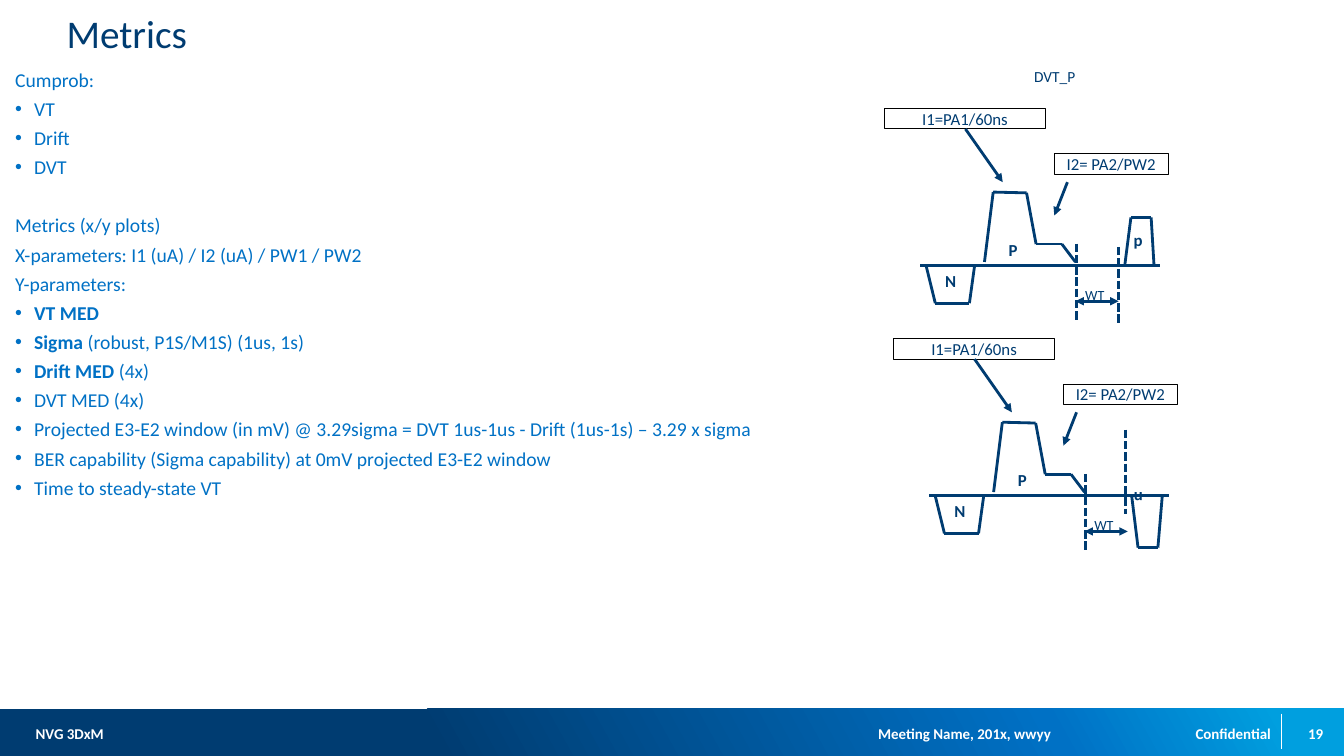
from copy import deepcopy
from dataclasses import dataclass
from itertools import pairwise

from pptx import Presentation
from pptx.dml.color import RGBColor
from pptx.enum.dml import MSO_LINE
from pptx.enum.shapes import MSO_CONNECTOR, MSO_SHAPE
from pptx.enum.text import MSO_ANCHOR, MSO_AUTO_SIZE, PP_ALIGN
from pptx.oxml.ns import qn
from pptx.oxml.xmlchemy import OxmlElement
from pptx.util import Cm, Pt


@dataclass(frozen=True)
class Theme:
    font: str = "Calibri"
    navy: RGBColor = RGBColor(0x00, 0x3C, 0x71)
    blue: RGBColor = RGBColor(0x00, 0x71, 0xC5)
    cyan: RGBColor = RGBColor(0x00, 0x9F, 0xDF)
    white: RGBColor = RGBColor(0xFF, 0xFF, 0xFF)
    black: RGBColor = RGBColor(0x00, 0x00, 0x00)
    title: float = 28
    body: float = 14
    label: float = 12
    caption: float = 11
    small: float = 10
    footer: float = 10.7
    stroke: float = 2
    hairline: float = 0.75


THEME = Theme()

# Bulleted?, bold part, plain part, space before in points
METRICS = [
    (False, "", "Cumprob:", 0),
    (True, "", "VT", 4),
    (True, "", "Drift", 4),
    (True, "", "DVT", 4),
    (False, "", "Metrics (x/y plots)", 25),
    (False, "", "X-parameters: I1 (uA) / I2 (uA) / PW1 / PW2", 4),
    (False, "", "Y-parameters:", 4),
    (True, "VT MED", "", 4),
    (True, "Sigma", " (robust, P1S/M1S) (1us, 1s)", 4),
    (True, "Drift MED ", "(4x)", 4),
    (True, "", "DVT MED (4x)", 4),
    (True, "", "Projected E3-E2 window (in mV) @ 3.29sigma = DVT 1us-1us"
               " - Drift (1us-1s) – 3.29 x sigma", 4),
    (True, "", "BER capability (Sigma capability) at 0mV projected E3-E2 window", 4),
    (True, "", "Time to steady-state VT", 4),
]

# Waveform points in cm from the corner of a diagram
SET_PULSE = [(2.51, 3.86), (2.73, 2.1), (3.57, 2.12), (3.81, 3.41), (4.46, 3.41), (4.8, 3.86)]
N_PULSE = [(1.04, 3.96), (1.27, 4.9), (2.13, 4.9), (2.26, 3.96)]
READ_UP = dict(pulse=[(6.05, 3.91), (6.2, 2.74), (6.71, 2.74), (6.78, 3.91)],
               marker=[(5.89, 3.48), (5.89, 5.41)], text="p", at=(6.27, 3.05), turn=0)
READ_DOWN = dict(pulse=[(5.99, 3.96), (6.15, 5.26), (6.65, 5.26), (6.76, 3.96)],
                 marker=[(5.84, 2.29), (5.84, 4.42)], text="n", at=(5.99, 3.78), turn=180)


def style(font, size, color, bold=False):
    font.name, font.size, font.bold = THEME.font, Pt(size), bold
    font.color.rgb = color


def frame(sp, anchor=MSO_ANCHOR.TOP, wrap=True):
    tf = sp.text_frame
    tf.margin_left = tf.margin_right = tf.margin_top = tf.margin_bottom = 0
    tf.auto_size, tf.vertical_anchor, tf.word_wrap = MSO_AUTO_SIZE.NONE, anchor, wrap
    return tf


def place(sp, left, top, width, height):
    sp.left, sp.top, sp.width, sp.height = Cm(left), Cm(top), Cm(width), Cm(height)


def add_label(s, text, left, top, width, height, size, color=THEME.navy, bold=False,
              align=PP_ALIGN.LEFT, anchor=MSO_ANCHOR.TOP, wrap=False):
    sp = s.shapes.add_textbox(Cm(left), Cm(top), Cm(width), Cm(height))
    p = frame(sp, anchor, wrap).paragraphs[0]
    p.text, p.alignment = text, align
    style(p.runs[0].font, size, color, bold)
    return sp


def add_line(s, start, end, color=THEME.navy, width=THEME.stroke, dashed=False, arrows=()):
    line = s.shapes.add_connector(MSO_CONNECTOR.STRAIGHT, *(Cm(v) for v in (*start, *end)))
    line.line.color.rgb, line.line.width = color, Pt(width)
    if dashed:
        line.line.dash_style = MSO_LINE.SQUARE_DOT
    for tag in arrows:
        arrow = OxmlElement(tag)
        arrow.set("type", "triangle")
        line.line._get_or_add_ln().append(arrow)
    line._element.spPr.append(OxmlElement("a:effectLst"))


def add_title(s, text, left, top, width, height):
    sp = s.shapes.title
    place(sp, left, top, width, height)
    p = frame(sp).paragraphs[0]
    p.text, p.alignment = text, PP_ALIGN.LEFT
    style(p.runs[0].font, THEME.title, THEME.navy)


def set_bullet(p, bulleted):
    pPr = p._p.get_or_add_pPr()
    indent = Cm(0.48) if bulleted else 0
    pPr.set("marL", str(indent))
    pPr.set("indent", str(-indent))
    bullet = OxmlElement("a:buChar" if bulleted else "a:buNone")
    if bulleted:
        bullet.set("char", "•")
    pPr.append(bullet)


def add_metrics(s, left, top, width, height):
    sp = s.placeholders[1]
    place(sp, left, top, width, height)
    tf = frame(sp)
    for i, (bulleted, strong, plain, gap) in enumerate(METRICS):
        p = tf.add_paragraph() if i else tf.paragraphs[0]
        set_bullet(p, bulleted)
        p.space_before, p.space_after, p.line_spacing = Pt(gap), Pt(0), 1.0
        for text, bold in ((strong, True), (plain, False)):
            if text:
                r = p.add_run()
                r.text = text
                style(r.font, THEME.body, THEME.blue, bold)


def add_pulse_diagram(s, left, top, read):
    def at(point):
        return left + point[0], top + point[1]

    def line(start, end, **options):
        add_line(s, at(start), at(end), **options)

    # Baseline and waveform
    line((0.89, 3.94), (6.93, 3.94))
    for pulse in (N_PULSE, SET_PULSE, read["pulse"]):
        for start, end in pairwise(pulse):
            line(start, end)

    # Wait time between the dashed markers
    line((4.83, 3.4), (4.83, 5.33), dashed=True)
    line(*read["marker"], dashed=True)
    line((4.8, 4.85), (5.89, 4.85), arrows=("a:headEnd", "a:tailEnd"))
    add_label(s, "WT", *at((5.05, 4.47)), 0.56, 0.43, THEME.small)

    # Pulse names
    for text, point, turn in (("N", (1.52, 4.09), 0), ("P", (3.12, 3.3), 0),
                              (read["text"], read["at"], read["turn"])):
        sp = add_label(s, text, *at(point), 0.28, 0.51, THEME.label, bold=True)
        sp.rotation = turn

    # Current callouts
    for text, corner, width, start, end in (
            ("I1=PA1/60ns", (0, 0), 4.04, (2.03, 0.51), (2.97, 1.85)),
            ("I2= PA2/PW2", (4.27, 1.14), 2.87, (4.6, 1.85), (4.27, 2.69))):
        sp = add_label(s, text, *at(corner), width, 0.51, THEME.label,
                       align=PP_ALIGN.CENTER, wrap=True)
        sp.line.color.rgb, sp.line.width = THEME.black, Pt(THEME.hairline)
        line(start, end, arrows=("a:tailEnd",))


def add_footer(s, left, top, width, height):
    # Gradient band
    band = s.shapes.add_shape(MSO_SHAPE.RECTANGLE, Cm(left), Cm(top), Cm(width), Cm(height))
    band.shadow.inherit = False
    band.line.fill.background()
    band.fill.gradient()
    band.fill.gradient_angle = 29
    stops = band._element.spPr.find(".//" + qn("a:gsLst"))
    stops.append(deepcopy(stops[0]))
    colors = ((0.32, THEME.navy), (0.78, THEME.blue), (0.95, THEME.cyan))
    for stop, (position, color) in zip(band.fill.gradient_stops, colors):
        stop.position, stop.color.rgb = position, color

    # Divider and right-aligned texts, each given by its right edge
    add_line(s, (left + 32.29, top + 0.12), (left + 32.29, top + 1.01),
             THEME.white, THEME.hairline)
    for text, right, box in (("NVG 3DxM", 2.62, 2.4), ("Meeting Name, 201x, wwyy", 26.49, 9),
                             ("Confidential", 32.03, 4), ("19", 33.35, 0.9)):
        add_label(s, text, left + right - box, top + 0.12, box, 1.02, THEME.footer,
                  THEME.white, True, PP_ALIGN.RIGHT, MSO_ANCHOR.MIDDLE, True)


def main():
    prs = Presentation()
    prs.slide_width, prs.slide_height = Cm(33.87), Cm(19.05)
    s = prs.slides.add_slide(prs.slide_layouts[1])
    add_footer(s, 0, 17.86, 33.87, 1.19)
    add_title(s, "Metrics", 1.68, 0.23, 30.48, 1.14)
    add_metrics(s, 0.38, 1.7, 30.6, 11.33)
    add_label(s, "DVT_P", 26.06, 1.68, 1.19, 0.48, THEME.caption)
    add_pulse_diagram(s, 22.3, 2.74, READ_UP)
    add_pulse_diagram(s, 22.53, 8.54, READ_DOWN)
    prs.save("out.pptx")


if __name__ == "__main__":
    main()
